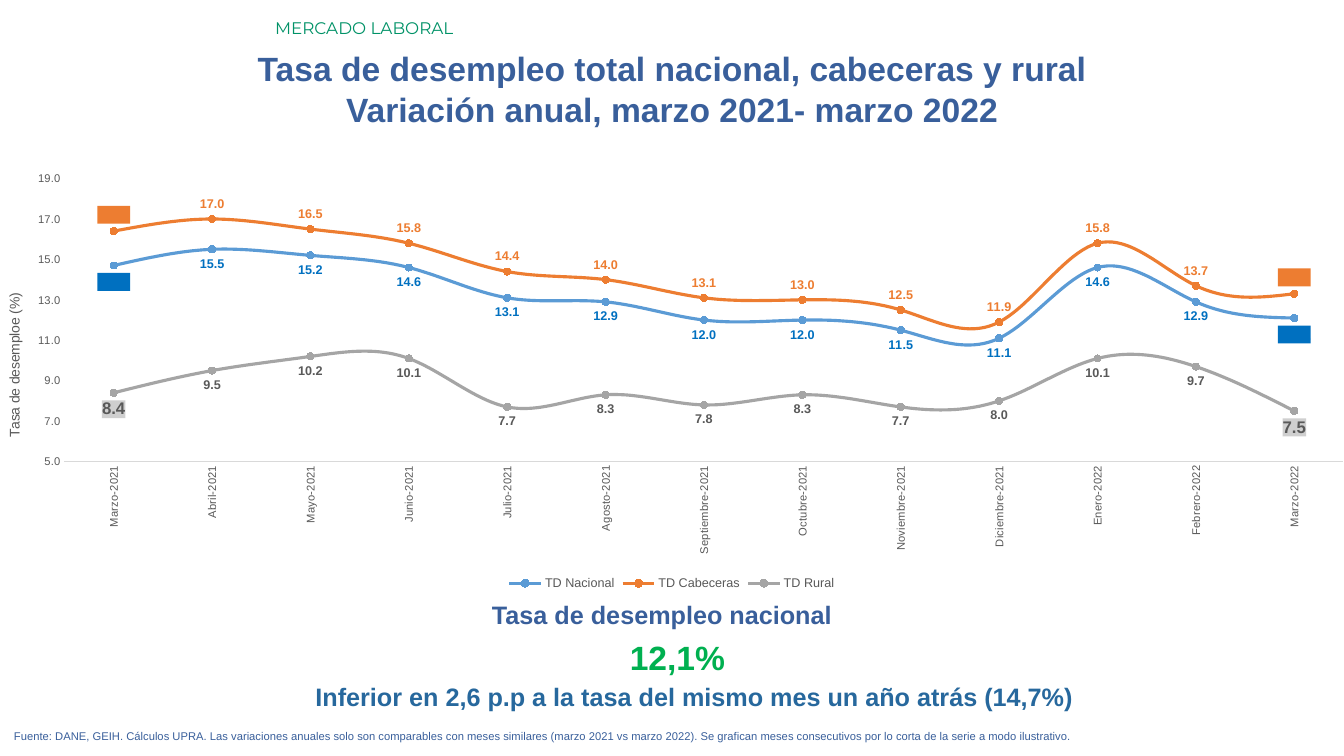
from dataclasses import dataclass

from lxml import etree
from pptx import Presentation
from pptx.chart.data import CategoryChartData
from pptx.dml.color import RGBColor
from pptx.enum.chart import (XL_CHART_TYPE, XL_LABEL_POSITION, XL_LEGEND_POSITION,
                             XL_MARKER_STYLE, XL_TICK_MARK)
from pptx.enum.text import MSO_ANCHOR, MSO_AUTO_SIZE, PP_ALIGN
from pptx.oxml import parse_xml
from pptx.oxml.ns import nsdecls, qn
from pptx.util import Inches, Pt


@dataclass(frozen=True)
class Theme:
    font: str = "Arial"
    section_font: str = "Montserrat"
    green: str = "009267"
    navy: str = "395F9B"
    figure: str = "00B050"
    teal: str = "27689D"
    grey: str = "595959"
    axis: str = "D9D9D9"
    national: str = "5B9BD5"
    national_label: str = "0070C0"
    urban: str = "ED7D31"
    rural: str = "A5A5A5"
    rural_box: str = "CFCFCF"
    title: int = 24
    statement: int = 18
    section: int = 12
    axis_title: int = 10
    label: int = 9
    small: int = 8


THEME = Theme()

MONTHS = ["Marzo-2021", "Abril-2021", "Mayo-2021", "Junio-2021", "Julio-2021",
          "Agosto-2021", "Septiembre-2021", "Octubre-2021", "Noviembre-2021",
          "Diciembre-2021", "Enero-2022", "Febrero-2022", "Marzo-2022"]

BELOW, ABOVE = XL_LABEL_POSITION.BELOW, XL_LABEL_POSITION.ABOVE

# Name, line colour, label colour, end-label fill, label position, rates
RATES = [
    ("TD Nacional", THEME.national, THEME.national_label, THEME.national_label, BELOW,
     [14.7, 15.5, 15.2, 14.6, 13.1, 12.9, 12, 12, 11.5, 11.1, 14.6, 12.9, 12.1]),
    ("TD Cabeceras", THEME.urban, THEME.urban, THEME.urban, ABOVE,
     [16.4, 17, 16.5, 15.8, 14.4, 14, 13.1, 13, 12.5, 11.9, 15.8, 13.7, 13.3]),
    ("TD Rural", THEME.rural, THEME.grey, THEME.rural_box, BELOW,
     [8.4, 9.5, 10.2, 10.1, 7.7, 8.3, 7.8, 8.3, 7.7, 8, 10.1, 9.7, 7.5]),
]


def apply(target, formats):
    for attribute, value in formats.items():
        setattr(target, attribute, value)


def style_font(font, size, color, bold=False, name=THEME.font):
    apply(font, {"name": name, "size": Pt(size), "bold": bold})
    font.color.rgb = RGBColor.from_string(color)


def fill_text(frame, lines, size, color, align=PP_ALIGN.LEFT, bold=True, name=THEME.font):
    apply(frame, {"word_wrap": True, "vertical_anchor": MSO_ANCHOR.TOP,
                  "auto_size": MSO_AUTO_SIZE.SHAPE_TO_FIT_TEXT})
    for index, line in enumerate(lines):
        paragraph = frame.add_paragraph() if index else frame.paragraphs[0]
        paragraph.alignment = align
        run = paragraph.add_run()
        run.text = line
        style_font(run.font, size, color, bold, name)


def add_text(slide, box, line, *style, **options):
    textbox = slide.shapes.add_textbox(*map(Inches, box))
    fill_text(textbox.text_frame, [line], *style, **options)


def set_layout(parent, index, **values):
    """Place a chart part by fractions of the chart area."""
    for old in parent.findall(qn("c:layout")):
        parent.remove(old)
    layout = etree.Element(qn("c:layout"))
    manual = etree.SubElement(layout, qn("c:manualLayout"))
    for tag, value in values.items():
        etree.SubElement(manual, qn(f"c:{tag}")).set("val", str(value))
    parent.insert(index, layout)


def turn_upright(element):
    for body in element.iter(qn("a:bodyPr")):
        body.set("rot", "-5400000")
        body.set("vert", "horz")


def style_series(series, color, label_color, box_color, position):
    series.smooth = True
    series.format.line.width = Pt(2.25)
    series.format.line.color.rgb = RGBColor.from_string(color)
    apply(series.marker, {"style": XL_MARKER_STYLE.CIRCLE, "size": 5})
    series.marker.format.fill.solid()
    series.marker.format.fill.fore_color.rgb = RGBColor.from_string(color)
    series.marker.format.line.color.rgb = RGBColor.from_string(color)

    labels = series.data_labels
    apply(labels, {"show_value": True, "position": position, "number_format": "0.0",
                   "number_format_is_linked": False})
    style_font(labels.font, THEME.label, label_color, True)

    # Larger boxed labels on the two months compared
    for index in (0, len(MONTHS) - 1):
        end_label = series.points[index].data_label
        style_font(end_label.font, THEME.section, label_color, True)
        end_label.position = position
    for text_format in series._element.xpath("c:dLbls/c:dLbl/c:txPr"):
        text_format.addprevious(parse_xml(
            f'<c:numFmt {nsdecls("c")} formatCode="0.0" sourceLinked="0"/>'))
        text_format.addprevious(parse_xml(
            f'<c:spPr {nsdecls("c", "a")}><a:solidFill>'
            f'<a:srgbClr val="{box_color}"/></a:solidFill></c:spPr>'))


def style_axes(chart):
    months, rate = chart.category_axis, chart.value_axis
    for axis in (months, rate):
        apply(axis, {"major_tick_mark": XL_TICK_MARK.NONE,
                     "minor_tick_mark": XL_TICK_MARK.NONE,
                     "has_major_gridlines": False})
        style_font(axis.tick_labels.font, THEME.small, THEME.grey)
    months.format.line.color.rgb = RGBColor.from_string(THEME.axis)
    months.format.line.width = Pt(0.75)
    turn_upright(months._element)

    apply(rate, {"minimum_scale": 5, "maximum_scale": 19, "major_unit": 2})
    apply(rate.tick_labels, {"number_format": "0.0", "number_format_is_linked": False})
    rate.format.line.fill.background()
    heading = rate.axis_title
    heading.text_frame.text = "Tasa de desemploe (%)"
    style_font(heading.text_frame.paragraphs[0].runs[0].font, THEME.axis_title, THEME.grey)
    turn_upright(heading._element)
    set_layout(heading._element, 1, xMode="edge", yMode="edge", x=0.002, y=0.298)


def add_rates_chart(slide, box):
    data = CategoryChartData(number_format="0.0")
    data.categories = MONTHS
    for name, *_, rates in RATES:
        data.add_series(name, rates)
    chart = slide.shapes.add_chart(XL_CHART_TYPE.LINE_MARKERS, *map(Inches, box), data).chart
    style_font(chart.font, THEME.axis_title, THEME.grey)
    apply(chart, {"has_title": False, "has_legend": True})
    apply(chart.legend, {"position": XL_LEGEND_POSITION.BOTTOM, "include_in_layout": False})
    style_font(chart.legend.font, THEME.label, THEME.grey)
    chart.plots[0].vary_by_categories = False
    for series, (_, *styles, _) in zip(chart.plots[0].series, RATES):
        style_series(series, *styles)
    style_axes(chart)
    set_layout(chart._chartSpace.chart.plotArea, 0, layoutTarget="inner", xMode="edge",
               yMode="edge", x=0.048, y=0.04, w=0.952, h=0.653)


def main():
    deck = Presentation()
    apply(deck, {"slide_width": Inches(13.33), "slide_height": Inches(7.5)})
    slide = deck.slides.add_slide(deck.slide_layouts[5])

    # Heading
    add_text(slide, (2.63, 0.13, 10.7, 0.3), "MERCADO LABORAL", THEME.section, THEME.green,
             bold=False, name=THEME.section_font)
    title = slide.shapes.title
    apply(title, {"left": Inches(0), "top": Inches(0.43),
                  "width": Inches(13.33), "height": Inches(0.91)})
    fill_text(title.text_frame, ["Tasa de desempleo total nacional, cabeceras y rural",
                                 "Variación anual, marzo 2021- marzo 2022"],
              THEME.title, THEME.navy, PP_ALIGN.CENTER)

    # Monthly rates
    add_rates_chart(slide, (0, 1.6, 13.33, 4.3))

    # Key figure
    add_text(slide, (4.74, 5.9, 3.65, 0.4), "Tasa de desempleo nacional",
             THEME.statement, THEME.navy, PP_ALIGN.CENTER)
    add_text(slide, (5.85, 6.27, 1.44, 0.5), "12,1%", THEME.title, THEME.figure, PP_ALIGN.RIGHT)
    add_text(slide, (3.03, 6.71, 7.78, 0.4),
             "Inferior en 2,6 p.p a la tasa del mismo mes un año atrás (14,7%)",
             THEME.statement, THEME.teal)

    # Source note
    add_text(slide, (0.04, 7.19, 12.91, 0.24),
             "Fuente: DANE, GEIH. Cálculos UPRA. Las variaciones anuales solo son comparables "
             "con meses similares (marzo 2021 vs marzo 2022). Se grafican meses consecutivos "
             "por lo corta de la serie a modo ilustrativo.",
             THEME.small, THEME.navy, PP_ALIGN.JUSTIFY, bold=False)

    deck.save("out.pptx")


if __name__ == "__main__":
    main()
